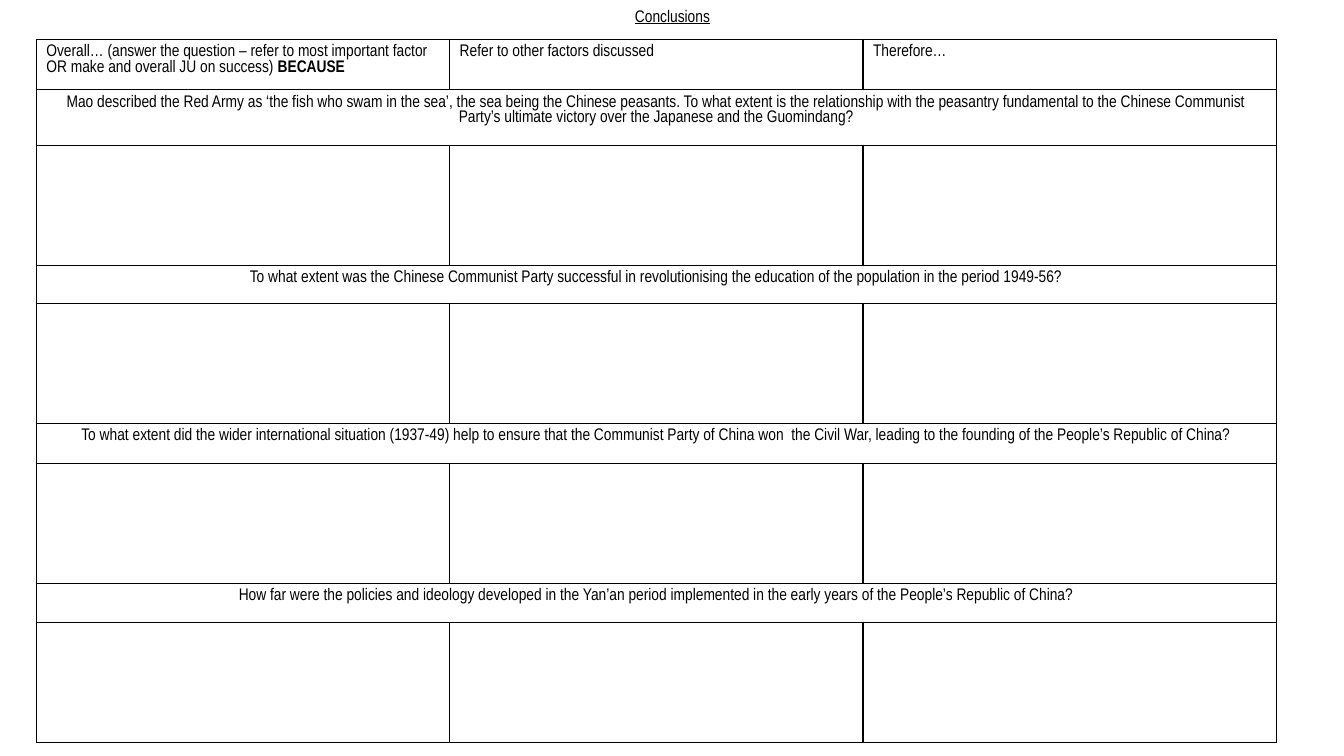
from dataclasses import dataclass

from lxml.etree import SubElement
from pptx import Presentation
from pptx.dml.color import RGBColor
from pptx.enum.text import MSO_ANCHOR, PP_ALIGN
from pptx.oxml.ns import qn
from pptx.slide import Slide
from pptx.table import Table, _Cell
from pptx.text.text import _Paragraph
from pptx.util import Inches, Pt


@dataclass(frozen=True)
class Theme:
    font: str = "Arial Narrow"
    size: float = 12
    ink: str = "000000"
    border: float = 1


@dataclass(frozen=True)
class Span:
    text: str
    bold: bool = False
    underline: bool = False


@dataclass(frozen=True)
class Question:
    text: str
    height: float  # inches


THEME = Theme()
SLIDE_W, SLIDE_H = 13.33, 7.5

# Grid: three equal columns, a heading row, then question and answer rows
LEFT, TOP = 0.027 * SLIDE_W, 0.052 * SLIDE_H
COLUMN_W = 4.1
HEADING_H, ANSWER_H = 0.49, 1.19

HEADINGS: list[list[Span]] = [
    [Span("Overall… (answer the question – refer to most important factor "
          "OR make and overall JU on success) "), Span("BECAUSE", bold=True)],
    [Span("Refer to other factors discussed")],
    [Span("Therefore…")],
]
QUESTIONS = [
    Question("Mao described the Red Army as ‘the fish who swam in the sea’, the sea being "
             "the Chinese peasants. To what extent is the relationship with the peasantry "
             "fundamental to the Chinese Communist Party’s ultimate victory over the "
             "Japanese and the Guomindang?", 0.55),
    Question("To what extent was the Chinese Communist Party successful in revolutionising "
             "the education of the population in the period 1949-56?", 0.38),
    Question("To what extent did the wider international situation (1937-49) help to ensure "
             "that the Communist Party of China won  the Civil War, leading to the founding "
             "of the People’s Republic of China?", 0.4),
    Question("How far were the policies and ideology developed in the Yan’an period "
             "implemented in the early years of the People’s Republic of China?", 0.39),
]


def add_runs(p: _Paragraph, spans: list[Span]) -> None:
    for span in spans:
        r = p.add_run()
        r.text = span.text
        r.font.name = THEME.font
        r.font.size = Pt(THEME.size)
        r.font.bold = span.bold
        r.font.underline = span.underline
        r.font.color.rgb = RGBColor.from_string(THEME.ink)


def style_cell(cell: _Cell) -> None:
    tc_pr = cell._tc.get_or_add_tcPr()
    for side in ("a:lnL", "a:lnR", "a:lnT", "a:lnB"):
        line = SubElement(tc_pr, qn(side), w=str(Pt(THEME.border)))
        fill = SubElement(line, qn("a:solidFill"))
        SubElement(fill, qn("a:srgbClr"), val=THEME.ink)
    cell.fill.background()


def add_title(s: Slide, text: str) -> None:
    sp = s.shapes.add_textbox(Inches(0.92), 0, Inches(11.5), Inches(0.33))
    tf = sp.text_frame
    tf.word_wrap = True
    tf.vertical_anchor = MSO_ANCHOR.MIDDLE
    tf.margin_top = tf.margin_bottom = 0
    p = tf.paragraphs[0]
    p.alignment = PP_ALIGN.CENTER
    p.line_spacing = 0.9
    add_runs(p, [Span(text, underline=True)])


def add_grid(s: Slide) -> Table:
    heights = [HEADING_H]
    for question in QUESTIONS:
        heights += [question.height, ANSWER_H]
    columns = len(HEADINGS)
    table = s.shapes.add_table(len(heights), columns, Inches(LEFT), Inches(TOP),
                               Inches(COLUMN_W * columns), Inches(sum(heights))).table
    table.first_row = table.horz_banding = False
    for row, height in zip(table.rows, heights):
        row.height = Inches(height)
    for column in table.columns:
        column.width = Inches(COLUMN_W)
    for cell in table.iter_cells():
        style_cell(cell)
    return table


def fill_grid(table: Table) -> None:
    for i, spans in enumerate(HEADINGS):
        add_runs(table.cell(0, i).text_frame.paragraphs[0], spans)
    for i, question in enumerate(QUESTIONS):
        row = 1 + 2 * i
        cell = table.cell(row, 0)
        cell.merge(table.cell(row, len(HEADINGS) - 1))
        p = cell.text_frame.paragraphs[0]
        p.alignment = PP_ALIGN.CENTER
        add_runs(p, [Span(question.text)])


def main() -> None:
    prs = Presentation()
    prs.slide_width, prs.slide_height = Inches(SLIDE_W), Inches(SLIDE_H)
    s = prs.slides.add_slide(prs.slide_layouts[6])
    add_title(s, "Conclusions")
    fill_grid(add_grid(s))
    prs.save("out.pptx")


if __name__ == "__main__":
    main()
